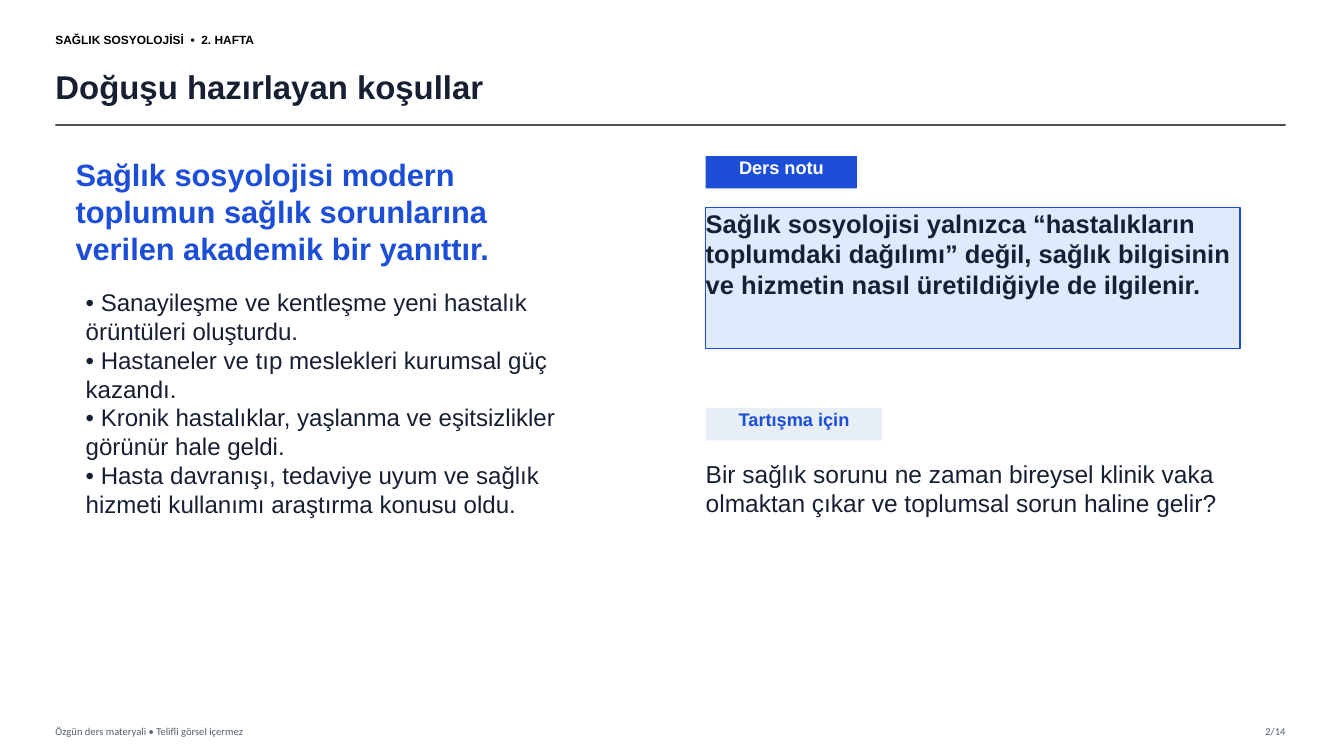
from lxml.etree import SubElement
from pptx import Presentation
from pptx.dml.color import RGBColor
from pptx.enum.shapes import MSO_CONNECTOR, MSO_SHAPE
from pptx.enum.text import MSO_ANCHOR, PP_ALIGN
from pptx.oxml.ns import qn
from pptx.util import Inches, Pt

BLACK = RGBColor(0x00, 0x00, 0x00)
WHITE = RGBColor(0xFF, 0xFF, 0xFF)
INK = RGBColor(0x17, 0x20, 0x33)
BLUE = RGBColor(0x1D, 0x4E, 0xD8)
PALE = RGBColor(0xDF, 0xEA, 0xFE)
MIST = RGBColor(0xE8, 0xEE, 0xF5)
GREY = RGBColor(0x50, 0x60, 0x70)
RULE = RGBColor(0x33, 0x33, 0x33)

WEEK = "SAĞLIK SOSYOLOJİSİ  •  2. HAFTA"
TITLE = "Doğuşu hazırlayan koşullar"
CLAIM = "Sağlık sosyolojisi modern toplumun sağlık sorunlarına verilen akademik bir yanıttır."
CAUSES = [
    "Sanayileşme ve kentleşme yeni hastalık örüntüleri oluşturdu.",
    "Hastaneler ve tıp meslekleri kurumsal güç kazandı.",
    "Kronik hastalıklar, yaşlanma ve eşitsizlikler görünür hale geldi.",
    "Hasta davranışı, tedaviye uyum ve sağlık hizmeti kullanımı araştırma konusu oldu.",
]
NOTE = ("Sağlık sosyolojisi yalnızca “hastalıkların toplumdaki dağılımı” değil, "
        "sağlık bilgisinin ve hizmetin nasıl üretildiğiyle de ilgilenir.")
ASK = "Bir sağlık sorunu ne zaman bireysel klinik vaka olmaktan çıkar ve toplumsal sorun haline gelir?"
CREDIT = "Özgün ders materyali • Telifli görsel içermez"
PAGE = "2/14"

LEFT, RIGHT = 0.55, 12.75
TOP, SIDE, WIDE = 1.55, 7, 5.3
TAG, FOOT = 0.32, 7.14

deck = Presentation()
deck.slide_width, deck.slide_height = Inches(13.33), Inches(7.5)
slide = deck.slides.add_slide(deck.slide_layouts[6])


def write(shape, lines, size, color, bold=False, align=PP_ALIGN.LEFT,
          anchor=MSO_ANCHOR.TOP, face="Arial"):
    frame = shape.text_frame
    frame.word_wrap = True
    frame.vertical_anchor = anchor
    frame.margin_left = frame.margin_right = 0
    frame.margin_top = frame.margin_bottom = 0
    frame.text = "\n".join(lines)
    for para in frame.paragraphs:
        para.alignment = align
        font = para.font
        font.name, font.size, font.bold = face, Pt(size), bold
        font.color.rgb = color


def add_text(box, lines, size, color, **style):
    write(slide.shapes.add_textbox(*map(Inches, box)), lines, size, color, **style)


def add_panel(box, fill, edge, lines, size, color, **style):
    panel = slide.shapes.add_shape(MSO_SHAPE.RECTANGLE, *map(Inches, box))
    panel.shadow.inherit = False
    panel.fill.solid()
    panel.fill.fore_color.rgb = fill
    if edge:
        panel.line.color.rgb = edge
        panel.line.width = Pt(1)
    else:
        panel.line.fill.background()
    write(panel, lines, size, color, bold=True, **style)


def add_rule(y):
    rule = slide.shapes.add_connector(
        MSO_CONNECTOR.STRAIGHT, Inches(LEFT), Inches(y), Inches(RIGHT), Inches(y))
    rule.line.color.rgb = RULE
    rule.line.width = Pt(1.2)
    props = rule.line._get_or_add_ln().getparent()
    SubElement(next(props.iter(qn("a:srgbClr"))), qn("a:alpha"), val="85000")
    SubElement(props, qn("a:effectLst"))


MID = MSO_ANCHOR.MIDDLE
add_text((LEFT, 0.25, 3.6, 0.28), [WEEK], 8.5, BLACK, bold=True, anchor=MID)
add_text((LEFT, 0.58, 11.95, 0.55), [TITLE], 23.5, INK, bold=True, anchor=MID)
add_rule(1.24)

add_text((0.75, TOP, 4.6, 1), [CLAIM], 22, BLUE, bold=True)
add_text((0.85, 2.85, 5.25, 2.7), [f"• {cause}" for cause in CAUSES], 17.2, INK)

add_panel((SIDE, TOP, 1.5, TAG), BLUE, None, ["Ders notu"], 13, WHITE, align=PP_ALIGN.CENTER)
add_panel((SIDE, 2.06, WIDE, 1.4), PALE, BLUE, [NOTE], 18.2, INK)
add_panel((SIDE, 4.05, 1.75, TAG), MIST, None, ["Tartışma için"], 13, BLUE, align=PP_ALIGN.CENTER)
add_text((SIDE, 4.55, WIDE, 1.25), [ASK], 17.5, INK)

add_text((LEFT, FOOT, 6, 0.22), [CREDIT], 7.5, GREY, anchor=MID, face="Calibri")
add_text((RIGHT - 0.65, FOOT, 0.65, 0.22), [PAGE], 7.5, GREY,
         align=PP_ALIGN.RIGHT, anchor=MID, face="Calibri")

deck.save("out.pptx")
